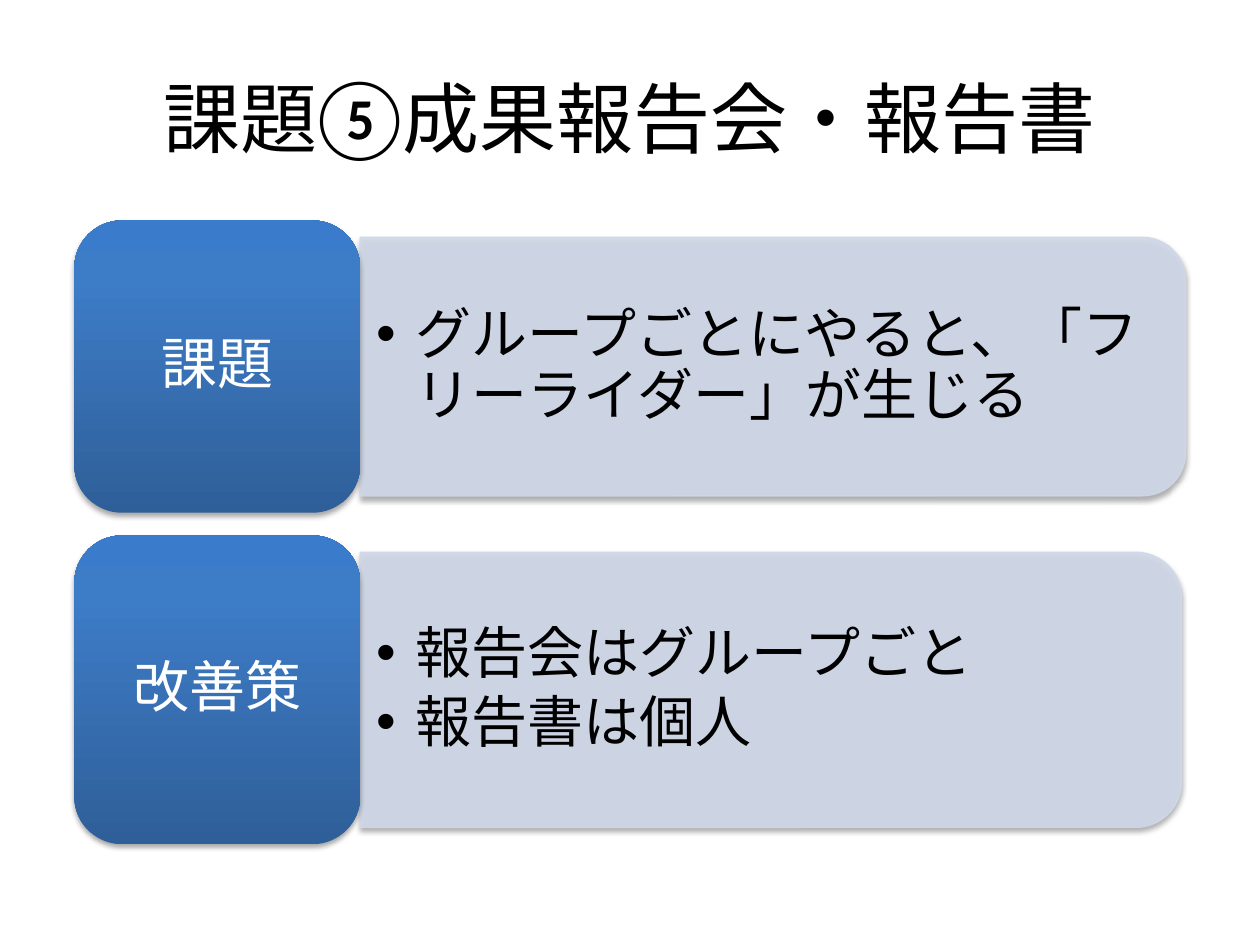
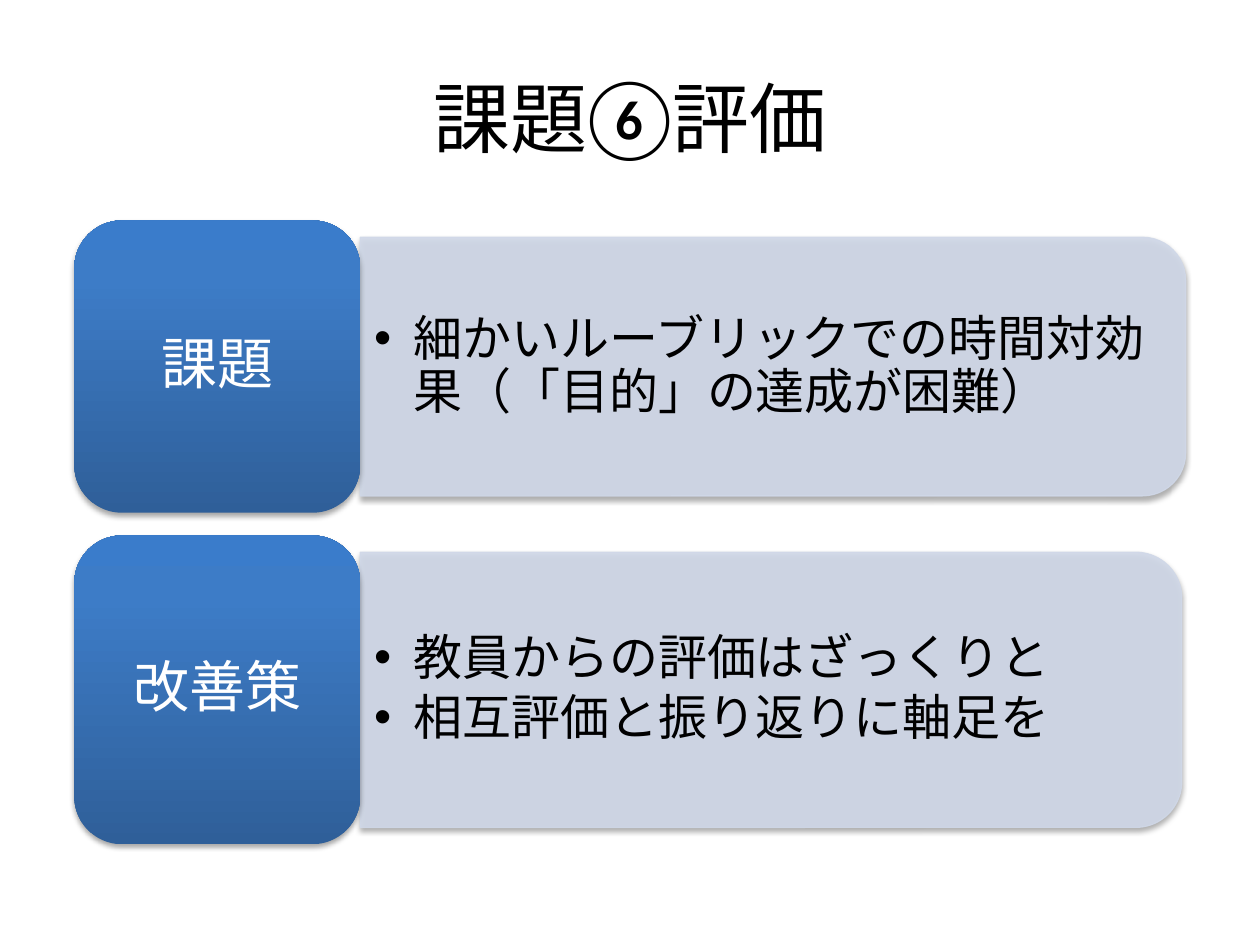
import copy

import pptx
import pptx.dml.color
import pptx.enum.lang
import pptx.enum.shapes
import pptx.enum.text
import pptx.oxml
import pptx.oxml.ns
import pptx.util

Pt = pptx.util.Pt
qn = pptx.oxml.ns.qn

COLORS = {
    "text": "000000",
    "label_text": "FFFFFF",
    "panel": "D0D8E8",
    "label_bottom": "2F5F99",
    "label_middle": "3D7CC7",
    "label_top": "3A7CCB",
}
FONT = "Lato"
LABEL_GRADIENT = [(0, "label_bottom"), (0.8, "label_middle"), (1, "label_top")]
TITLE_BOX = (36, 21.6, 648, 90)
ROW_BOXES = [(42.5, 126, 635, 167), (42.5, 306, 632.8, 176.4)]
LABEL_WIDTH = 163.4
LABEL_INSET = (17.3, 13)
LABEL_SIZE = 32
PANEL_INSET = 9.6
LIST_INSET = 7.2
LIST_HANG = 22.5

SLIDES = [
    ("課題⑤成果報告会・報告書", 32, [
        ("課題", ["グループごとにやると、「フリーライダー」が生じる"]),
        ("改善策", ["報告会はグループごと", "報告書は個人"]),
    ]),
    ("課題⑥評価", 28, [
        ("課題", ["細かいルーブリックでの時間対効果（「目的」の達成が困難）"]),
        ("改善策", ["教員からの評価はざっくりと", "相互評価と振り返りに軸足を"]),
    ]),
]


def rgb(name):
    return pptx.dml.color.RGBColor.from_string(COLORS[name])


def place(shape, box):
    shape.left, shape.top, shape.width, shape.height = map(Pt, box)


def write(shape, text, size, color, alignment, insets=None):
    frame = shape.text_frame
    frame.text = text
    frame.word_wrap = True
    frame.auto_size = pptx.enum.text.MSO_AUTO_SIZE.NONE
    frame.vertical_anchor = pptx.enum.text.MSO_ANCHOR.MIDDLE
    if insets:
        frame.margin_left = frame.margin_right = Pt(insets[0])
        frame.margin_top = frame.margin_bottom = Pt(insets[1])
    for paragraph in frame.paragraphs:
        paragraph.alignment = alignment
        for run in paragraph.runs:
            run.font.size = Pt(size)
            run.font.name = FONT
            run.font.color.rgb = rgb(color)
            run.font.language_id = pptx.enum.lang.MSO_LANGUAGE_ID.JAPANESE
    for latin in shape.element.iter(qn("a:latin")):
        east_asian = copy.deepcopy(latin)
        east_asian.tag = qn("a:ea")
        latin.addnext(east_asian)


def set_spacing(shape, after):
    for paragraph in shape.text_frame.paragraphs:
        paragraph.line_spacing = 0.9
        paragraph.space_before = Pt(0)
        paragraph.space_after = Pt(after)


def add_shadow(shape):
    shape.element.spPr.append(pptx.oxml.parse_xml(
        f'<a:effectLst {pptx.oxml.ns.nsdecls("a")}>'
        f'<a:outerShdw blurRad="{Pt(3.1)}" dist="{Pt(1.8)}" dir="5400000" rotWithShape="0">'
        '<a:srgbClr val="000000"><a:alpha val="35000"/></a:srgbClr>'
        '</a:outerShdw></a:effectLst>'))


def add_panel(slide, box):
    left, top, width, height = box
    shift = (width - height) / 2
    panel = slide.shapes.add_shape(
        pptx.enum.shapes.MSO_SHAPE.ROUND_2_SAME_RECTANGLE,
        Pt(left + shift), Pt(top - shift), Pt(height), Pt(width))
    panel.rotation = 90
    panel.fill.solid()
    panel.fill.fore_color.rgb = rgb("panel")
    panel.line.color.rgb = rgb("panel")
    panel.line.width = Pt(0.75)
    for color in panel.element.spPr.iter(qn("a:srgbClr")):
        color.append(pptx.oxml.parse_xml(
            f'<a:alpha {pptx.oxml.ns.nsdecls("a")} val="90000"/>'))
    add_shadow(panel)


def fill_list(slide, placeholder, box, items, size):
    left, top, width, height = box
    place(placeholder, (left, top + LIST_INSET, width - LIST_INSET, height - 2 * LIST_INSET))
    write(placeholder, "\n".join(items), size, "text",
          pptx.enum.text.PP_ALIGN.LEFT, (size * 0.28, size * 0.14))
    set_spacing(placeholder, size * 0.15)
    for properties in placeholder.element.iter(qn("a:pPr")):
        properties.set("marL", str(Pt(LIST_HANG)))
        properties.set("indent", str(-Pt(LIST_HANG)))
        properties.append(pptx.oxml.parse_xml(
            f'<a:buChar {pptx.oxml.ns.nsdecls("a")} char="•"/>'))
    slide.shapes.element.append(placeholder.element)


def add_label(slide, box, text):
    label = slide.shapes.add_shape(
        pptx.enum.shapes.MSO_SHAPE.ROUNDED_RECTANGLE, *map(Pt, box))
    label.fill.gradient()
    label.fill.gradient_angle = 90
    first_stop = next(label.element.spPr.iter(qn("a:gs")))
    first_stop.addnext(copy.deepcopy(first_stop))
    for stop, (position, color) in zip(label.fill.gradient_stops, LABEL_GRADIENT):
        stop.position = position
        stop.color.rgb = rgb(color)
    label.line.fill.background()
    add_shadow(label)
    write(label, text, LABEL_SIZE, "label_text",
          pptx.enum.text.PP_ALIGN.CENTER, LABEL_INSET)
    set_spacing(label, LABEL_SIZE * 0.35)


def add_row(slide, placeholder, box, label, items, size):
    left, top, width, height = box
    panel_box = (left + LABEL_WIDTH, top + PANEL_INSET,
                 width - LABEL_WIDTH, height - 2 * PANEL_INSET)
    add_panel(slide, panel_box)
    fill_list(slide, placeholder, panel_box, items, size)
    add_label(slide, (left, top, LABEL_WIDTH, height), label)


def add_issue_slide(presentation, title, size, rows):
    slide = presentation.slides.add_slide(
        presentation.slide_layouts.get_by_name("Two Content"))
    place(slide.shapes.title, TITLE_BOX)
    write(slide.shapes.title, title, 44, "text", pptx.enum.text.PP_ALIGN.CENTER)
    list_placeholders = list(slide.placeholders)[1:]
    for placeholder, box, (label, items) in zip(list_placeholders, ROW_BOXES, rows):
        add_row(slide, placeholder, box, label, items, size)


def main():
    presentation = pptx.Presentation()
    presentation.slide_width = Pt(720)
    presentation.slide_height = Pt(540)
    for title, size, rows in SLIDES:
        add_issue_slide(presentation, title, size, rows)
    presentation.save("out.pptx")


if __name__ == "__main__":
    main()
